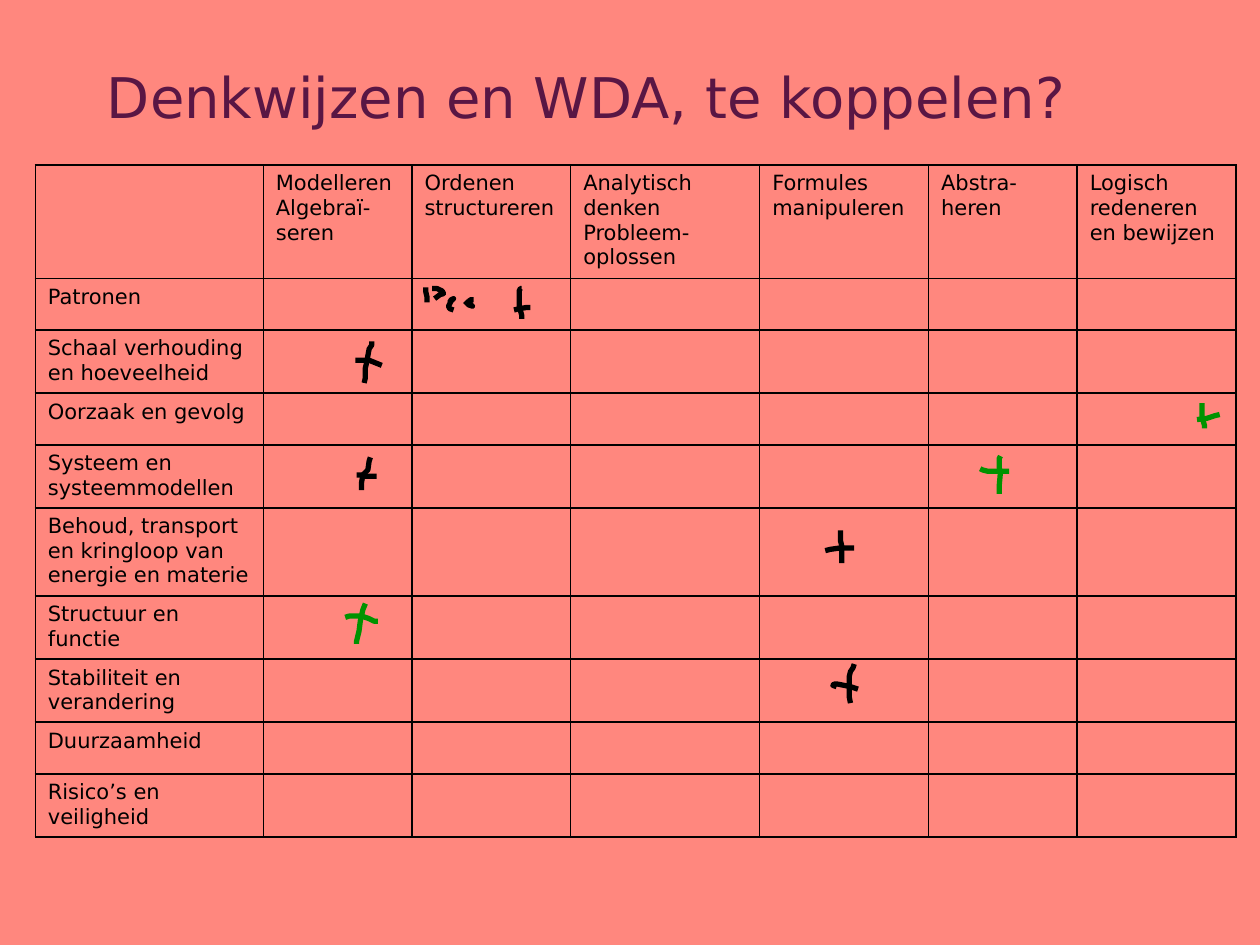
from dataclasses import dataclass

from lxml import etree
from pptx import Presentation
from pptx.dml.color import RGBColor
from pptx.enum.text import MSO_ANCHOR, PP_ALIGN
from pptx.oxml.ns import qn
from pptx.util import Inches, Pt

BOTTOM = MSO_ANCHOR.BOTTOM
LEFT = PP_ALIGN.LEFT


@dataclass(frozen=True)
class Theme:
    font: str = "DejaVu Sans"
    background: str = "FF877E"
    title: str = "591644"
    text: str = "000000"
    black_ink: str = "000000"
    green_ink: str = "009300"
    title_size: int = 32
    cell_size: int = 12
    border: int = 1
    pen: int = 3


THEME = Theme()
SLIDE_W, SLIDE_H = Inches(10), Inches(7.5)

COLUMN_WIDTHS = [1.81, 1.18, 1.26, 1.5, 1.34, 1.18, 1.26]
ROW_HEIGHT = 0.41
WAYS_OF_THINKING = [
    "",
    "Modelleren\nAlgebraï-seren",
    "Ordenen\nstructureren",
    "Analytisch denken\nProbleem-oplossen",
    "Formules manipuleren",
    "Abstra-heren",
    "Logisch redeneren en bewijzen",
]
CONCEPTS = [
    "Patronen",
    "Schaal verhouding en hoeveelheid",
    "Oorzaak en gevolg",
    "Systeem en systeemmodellen",
    "Behoud, transport en kringloop van energie en materie",
    "Structuur en functie",
    "Stabiliteit en verandering",
    "Duurzaamheid",
    "Risico’s en veiligheid",
]

# Pen strokes, as points in hundredths of an inch from the slide's top left.
PEN_STROKES = {
    THEME.black_ink: [
        # Patronen x ordenen: plus, then the scribble before it
        [(414, 229), (413, 229), (412, 231), (412, 243), (414, 250), (414, 253)],
        [(421, 244), (418, 244), (412, 245), (408, 246)],
        [(338, 228), (338, 232), (339, 236), (339, 240)],
        [(343, 229), (347, 229), (351, 231), (352, 233), (349, 234), (345, 237)],
        [(357, 240), (358, 238), (360, 237), (358, 239), (356, 243), (357, 245), (360, 246)],
        [(369, 239), (372, 242), (375, 243), (373, 241), (372, 240), (373, 238), (376, 238)],
        # Schaal x modelleren
        [(295, 271), (295, 274), (293, 277), (291, 288), (290, 292), (290, 300), (289, 304)],
        [(282, 286), (293, 286), (298, 288), (303, 290)],
        # Systeem x modelleren
        [(294, 363), (293, 366), (292, 373), (288, 377), (287, 383), (287, 389)],
        [(283, 377), (287, 377), (290, 378), (299, 378)],
        # Stabiliteit x formules
        [(678, 527), (677, 530), (675, 533), (674, 537), (674, 553), (675, 558)],
        [(664, 545), (661, 544), (662, 543), (665, 543), (675, 545), (681, 547)],
        # Behoud x formules
        [(667, 421), (667, 429), (668, 433), (668, 447)],
        [(655, 437), (659, 436), (666, 435), (678, 435)],
    ],
    THEME.green_ink: [
        # Structuur x modelleren
        [(290, 479), (288, 484), (286, 493), (285, 501), (283, 509), (283, 511)],
        [(274, 490), (277, 489), (287, 489), (293, 491), (297, 493), (300, 493)],
        # Oorzaak x logisch redeneren
        [(954, 320), (954, 331), (956, 338), (956, 340)],
        [(968, 329), (964, 330), (958, 332), (950, 333)],
        # Systeem x abstraheren
        [(794, 362), (793, 364), (793, 371), (794, 375), (793, 386), (793, 392)],
        [(778, 372), (780, 373), (784, 374), (801, 374)],
    ],
}


def set_font(text_frame, size, colour):
    for paragraph in text_frame.paragraphs:
        paragraph.alignment = LEFT
        for run in paragraph.runs:
            run.font.name = THEME.font
            run.font.size = Pt(size)
            run.font.color.rgb = RGBColor.from_string(colour)


def add_borders(cell):
    properties = cell._tc.get_or_add_tcPr()
    for index, side in enumerate(("a:lnL", "a:lnR", "a:lnT", "a:lnB")):
        border = etree.Element(qn(side), w=str(Pt(THEME.border)))
        fill = etree.SubElement(border, qn("a:solidFill"))
        etree.SubElement(fill, qn("a:srgbClr"), val=THEME.text)
        properties.insert(index, border)


prs = Presentation()
prs.slide_width, prs.slide_height = SLIDE_W, SLIDE_H
slide = prs.slides.add_slide(prs.slide_layouts[6])
slide.background.fill.solid()
slide.background.fill.fore_color.rgb = RGBColor.from_string(THEME.background)

title = slide.shapes.add_textbox(
    int(SLIDE_W * 0.075), int(SLIDE_H / 30), int(SLIDE_W * 0.875), int(SLIDE_H * 0.11)
).text_frame
title.word_wrap = True
title.vertical_anchor = BOTTOM
title.text = "Denkwijzen en WDA, te koppelen?"
set_font(title, THEME.title_size, THEME.title)

rows = [WAYS_OF_THINKING] + [
    [concept] + [""] * (len(COLUMN_WIDTHS) - 1) for concept in CONCEPTS
]
matrix = slide.shapes.add_table(
    len(rows), len(COLUMN_WIDTHS), int(SLIDE_W * 0.028), Inches(1.31),
    Inches(sum(COLUMN_WIDTHS)), Inches(ROW_HEIGHT * len(rows)),
).table
matrix.first_row = False
matrix.horz_banding = False
for column, width in zip(matrix.columns, COLUMN_WIDTHS):
    column.width = Inches(width)
for row, labels in zip(matrix.rows, rows):
    row.height = Inches(ROW_HEIGHT)
    for cell, label in zip(row.cells, labels):
        cell.fill.background()
        add_borders(cell)
        if label:
            cell.text_frame.text = label
            set_font(cell.text_frame, THEME.cell_size, THEME.text)
        else:
            cell.text_frame.paragraphs[0].font.size = Pt(THEME.cell_size)

for ink, strokes in PEN_STROKES.items():
    for start, *rest in strokes:
        builder = slide.shapes.build_freeform(*start, scale=Inches(0.01))
        builder.add_line_segments(rest, close=False)
        stroke = builder.convert_to_shape()
        stroke.shadow.inherit = False
        stroke.fill.background()
        stroke.line.color.rgb = RGBColor.from_string(ink)
        stroke.line.width = Pt(THEME.pen)

prs.save("out.pptx")
